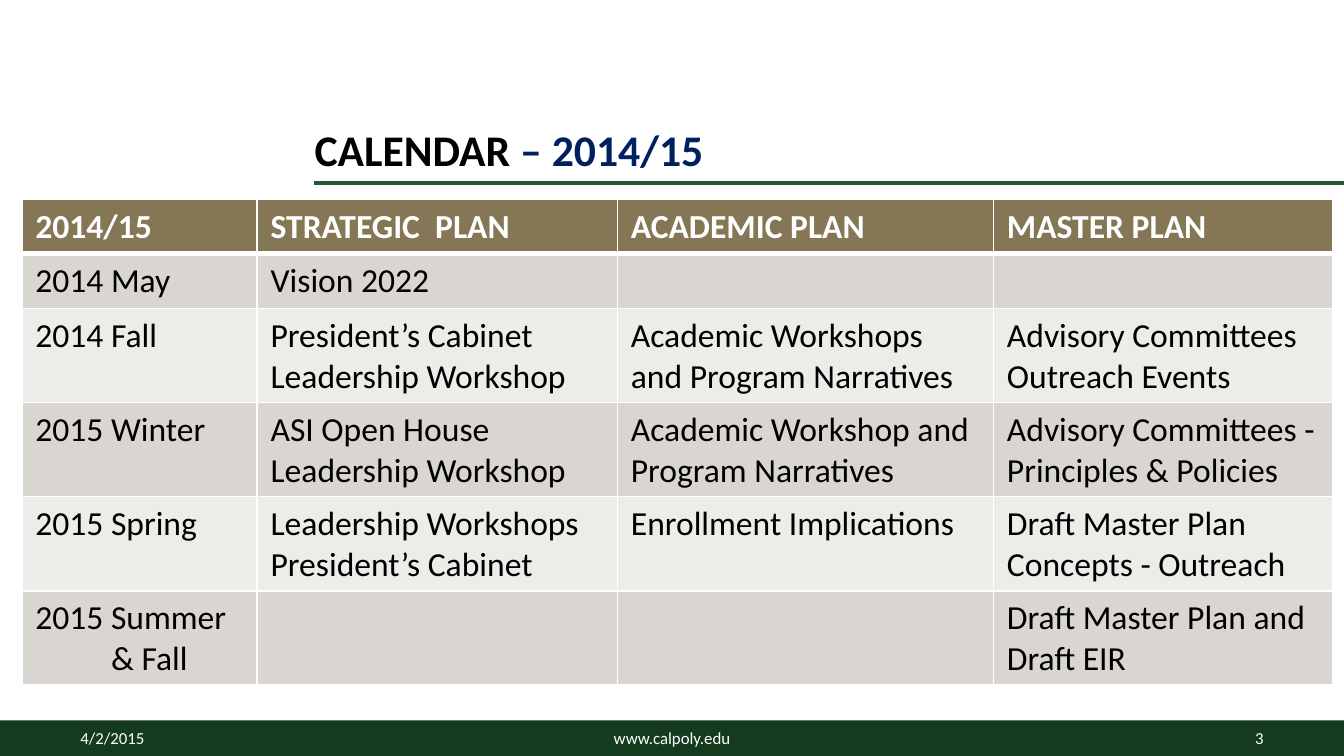
from lxml.etree import SubElement
from pptx import Presentation
from pptx.dml.color import RGBColor
from pptx.enum.shapes import MSO_CONNECTOR, MSO_SHAPE
from pptx.enum.text import MSO_ANCHOR, PP_ALIGN
from pptx.oxml.ns import qn
from pptx.util import Pt

WHITE = RGBColor(0xFF, 0xFF, 0xFF)
BLACK = RGBColor(0, 0, 0)
NAVY = RGBColor(0x00, 0x20, 0x60)
GREEN = RGBColor(0x23, 0x5A, 0x32)
FOREST = RGBColor(0x14, 0x3B, 0x1E)
GOLD = RGBColor(0x85, 0x77, 0x56)
BANDS = [RGBColor(0xD9, 0xD6, 0xD1), RGBColor(0xED, 0xEC, 0xE9)]
FONT = "Calibri"
WIDTH, HEIGHT = 720, 405

COLS = [126, 193, 201.5, 181.5]
ROWS = [
    ["2014/15", "STRATEGIC  PLAN", "ACADEMIC PLAN", "MASTER PLAN"],
    ["2014 May", "Vision 2022", "", ""],
    ["2014 Fall", "President’s Cabinet\nLeadership Workshop",
     "Academic Workshops and Program Narratives",
     "Advisory Committees\nOutreach Events"],
    ["2015 Winter", "ASI Open House\nLeadership Workshop",
     "Academic Workshop and Program Narratives",
     "Advisory Committees -\nPrinciples & Policies"],
    ["2015 Spring", "Leadership Workshops\nPresident’s Cabinet",
     "Enrollment Implications", "Draft Master Plan Concepts - Outreach"],
    ["2015 Summer & Fall", "", "", "Draft Master Plan and Draft EIR"],
]


def add_run(para, text, size, color, bold=False):
    run = para.add_run()
    run.text = text
    font = run.font
    font.name, font.size, font.bold = FONT, Pt(size), bold
    font.color.rgb = color


def add_text(slide, box, runs, size, align=PP_ALIGN.LEFT, bold=False):
    frame = slide.shapes.add_textbox(*map(Pt, box)).text_frame
    frame.word_wrap = True
    frame.vertical_anchor = MSO_ANCHOR.MIDDLE
    para = frame.paragraphs[0]
    para.alignment = align
    for text, color in runs:
        add_run(para, text, size, color, bold)


def add_title(slide, left, top, width, height):
    runs = [("CALENDAR ", BLACK), ("– 2014/15", NAVY)]
    add_text(slide, (left, top, width, height), runs, 23.4, bold=True)
    start, base = left + 6.7, top + height + 1.5
    rule = slide.shapes.add_connector(
        MSO_CONNECTOR.STRAIGHT, Pt(start), Pt(base), Pt(WIDTH), Pt(base))
    rule.line.color.rgb = GREEN
    rule.line.width = Pt(2.25)
    SubElement(rule._element.spPr, qn("a:effectLst"))


def set_edges(cell, base):
    props = cell._tc.get_or_add_tcPr()
    for side, width in zip("LRTB", (1, 1, 1, base)):
        line = SubElement(props, qn(f"a:ln{side}"), w=str(Pt(width)))
        fill = SubElement(line, qn("a:solidFill"))
        SubElement(fill, qn("a:srgbClr"), val=str(WHITE))


def fill_cell(cell, text, head, band):
    set_edges(cell, 3 if head else 1)
    cell.fill.solid()
    cell.fill.fore_color.rgb = GOLD if head else band
    if not text:
        return
    frame = cell.text_frame
    for i, line in enumerate(text.split("\n")):
        para = frame.add_paragraph() if i else frame.paragraphs[0]
        add_run(para, line, 18, WHITE if head else BLACK, head)


def add_plan(slide, left, top, width, height):
    grid = slide.shapes.add_table(
        len(ROWS), len(COLS), Pt(left), Pt(top), Pt(width), Pt(height)).table
    for col, size in zip(grid.columns, COLS):
        col.width = Pt(size)
    for r, row in enumerate(ROWS):
        grid.rows[r].height = Pt(29.2)
        for c, text in enumerate(row):
            fill_cell(grid.cell(r, c), text, r == 0, BANDS[(r - 1) % 2])
    last = grid.cell(len(ROWS) - 1, 0).text_frame.paragraphs[0]
    props = last._p.get_or_add_pPr()
    props.set("marL", str(Pt(40.5)))
    props.set("indent", str(Pt(-40.5)))


def add_footer(slide, left, top, width, height):
    bar = slide.shapes.add_shape(
        MSO_SHAPE.RECTANGLE, Pt(left), Pt(top), Pt(width), Pt(height))
    bar.shadow.inherit = False
    bar.fill.solid()
    bar.fill.fore_color.rgb = FOREST
    bar.line.fill.background()
    parts = [("4/2/2015", PP_ALIGN.LEFT), ("www.calpoly.edu", PP_ALIGN.CENTER),
             ("3", PP_ALIGN.RIGHT)]
    for i, (text, align) in enumerate(parts):
        box = (left + 36 + i * 219.6, top, 208.8, height)
        add_text(slide, box, [(text, WHITE)], 9, align)


def main():
    deck = Presentation()
    deck.slide_width, deck.slide_height = Pt(WIDTH), Pt(HEIGHT)
    slide = deck.slides.add_slide(deck.slide_layouts[6])
    add_footer(slide, 0, 386, WIDTH, 19)
    add_title(slide, 161.5, 63.5, 454, 33)
    add_plan(slide, 11.8, 106.8, sum(COLS), 29.2 * len(ROWS))
    deck.save("out.pptx")


if __name__ == "__main__":
    main()
